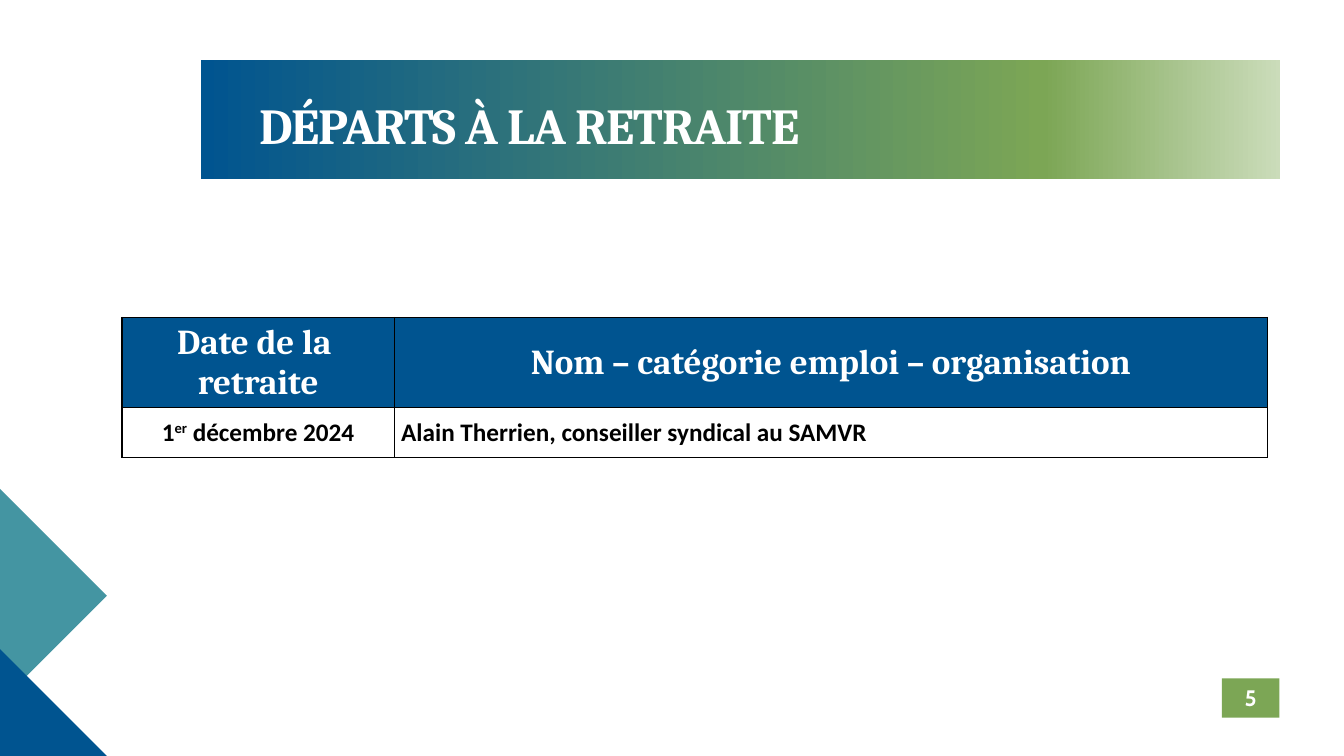
from lxml.etree import SubElement
from pptx import Presentation
from pptx.dml.color import RGBColor
from pptx.enum.shapes import MSO_SHAPE
from pptx.enum.text import MSO_ANCHOR, PP_ALIGN
from pptx.oxml import parse_xml
from pptx.oxml.ns import nsdecls, qn
from pptx.util import Inches, Pt

WIDE, HIGH = 13.33, 7.5
BLUE, TEAL, GREEN, PALE = "005490", "4495A2", "7CA655", "CBDCBA"
WHITE, BLACK = "FFFFFF", "000000"


def tint(code):
    return RGBColor.from_string(code)


def inch(*nums):
    return [Inches(n) for n in nums]


def paint(shape, code):
    shape.shadow.inherit = False
    shape.line.fill.background()
    shape.fill.solid()
    shape.fill.fore_color.rgb = tint(code)


def style(para, face, size, code, align=PP_ALIGN.LEFT):
    para.alignment = align
    for run in para.runs:
        font = run.font
        font.name, font.size, font.bold = face, Pt(size), True
        font.color.rgb = tint(code)


def pad(item, left, top, right, low):
    item.margin_left, item.margin_top, item.margin_right, item.margin_bottom = inch(
        left, top, right, low)


# Corner triangles, sized from one side length
def corner(slide, side):
    base = HIGH - side
    mid = base - side / 2
    teal = [(0, mid - side), (side, mid), (0, mid + side)]
    blue = [(0, base), (side, HIGH), (0, HIGH)]
    for points, code in ((teal, TEAL), (blue, BLUE)):
        first, *rest = [inch(*point) for point in points]
        build = slide.shapes.build_freeform(*first)
        build.add_line_segments(rest)
        paint(build.convert_to_shape(), code)


# Gradient band with the title on it
def banner(slide, left, top, width, height):
    band = slide.shapes.add_shape(MSO_SHAPE.RECTANGLE, *inch(left, top, width, height))
    paint(band, BLUE)
    stops = "".join(
        f'<a:gs pos="{share * 1000}"><a:srgbClr val="{code}"/></a:gs>'
        for share, code in ((0, BLUE), (78, GREEN), (100, PALE)))
    grad = parse_xml(f'<a:gradFill {nsdecls("a")} rotWithShape="1"><a:gsLst>{stops}'
                     '</a:gsLst><a:lin ang="0" scaled="0"/></a:gradFill>')
    props = band._element.spPr
    props.replace(props.find(qn("a:solidFill")), grad)

    title = slide.shapes.title
    title.left, title.top, title.width, title.height = inch(
        left + 0.48, top + 0.28, width - 0.82, 0.71)
    slide.shapes._spTree.append(title._element)
    frame = title.text_frame
    frame.text = "DÉPARTS À LA RETRAITE"
    frame.word_wrap = True
    frame.vertical_anchor = MSO_ANCHOR.TOP
    para = frame.paragraphs[0]
    para.line_spacing = 1.0
    style(para, "Cambria", 36, WHITE)
    para.runs[0]._r.get_or_add_rPr().set("spc", "-70")


# Page number tile
def page(slide, left, top, width, height):
    tile = slide.shapes.add_shape(MSO_SHAPE.RECTANGLE, *inch(left, top, width, height))
    paint(tile, GREEN)
    frame = tile.text_frame
    pad(frame, 0, 0, 0, 0)
    frame.vertical_anchor = MSO_ANCHOR.MIDDLE
    frame.text = "5"
    style(frame.paragraphs[0], "Cabin", 16, WHITE, PP_ALIGN.CENTER)


def border(cell):
    props = cell._tc.get_or_add_tcPr()
    for edge in ("lnL", "lnR", "lnT", "lnB"):
        line = SubElement(props, qn(f"a:{edge}"), w=str(Pt(1)))
        fill = SubElement(line, qn("a:solidFill"))
        SubElement(fill, qn("a:srgbClr"), val=BLACK)


# Table of retirements
def retire(slide, left, top, cols, rows):
    frame = slide.shapes.add_table(
        len(rows), len(cols), *inch(left, top, sum(cols), sum(rows)))
    table = frame.table
    table.horz_banding = False
    for col, width in zip(table.columns, cols):
        col.width = Inches(width)
    for row, height in zip(table.rows, rows):
        row.height = Inches(height)

    heads = ("Date de la \nretraite", "Nom – catégorie emploi – organisation")
    facts = (("1", "er", " décembre 2024"),
             ("Alain Therrien, conseiller syndical au SAMVR",))
    sides = (PP_ALIGN.CENTER, PP_ALIGN.LEFT)
    for num, (head, fact, side) in enumerate(zip(heads, facts, sides)):
        top_cell, low_cell = table.cell(0, num), table.cell(1, num)
        for cell in (top_cell, low_cell):
            border(cell)
            cell.vertical_anchor = MSO_ANCHOR.MIDDLE

        pad(top_cell, 0.01, 0.01, 0.01, 0)
        top_cell.fill.solid()
        top_cell.fill.fore_color.rgb = tint(BLUE)
        para = top_cell.text_frame.paragraphs[0]
        para.text = head
        style(para, "Cambria", 25, WHITE, PP_ALIGN.CENTER)

        pad(low_cell, 0.07, 0, 0.07, 0)
        low_cell.fill.background()
        para = low_cell.text_frame.paragraphs[0]
        for part in fact:
            run = para.add_run()
            run.text = part
            if part == "er":
                run._r.get_or_add_rPr().set("baseline", "30000")
        para.space_after = Pt(4)
        style(para, "Calibri", 18, BLACK, side)


def main():
    deck = Presentation()
    deck.slide_width, deck.slide_height = inch(WIDE, HIGH)
    slide = deck.slides.add_slide(deck.slide_layouts[5])
    corner(slide, 1.06)
    banner(slide, 1.99, 0.6, 10.71, 1.18)
    page(slide, 12.12, 6.73, 0.57, 0.39)
    retire(slide, 1.21, 3.15, (2.7, 8.66), (0.89, 0.5))
    deck.save("out.pptx")


if __name__ == "__main__":
    main()
